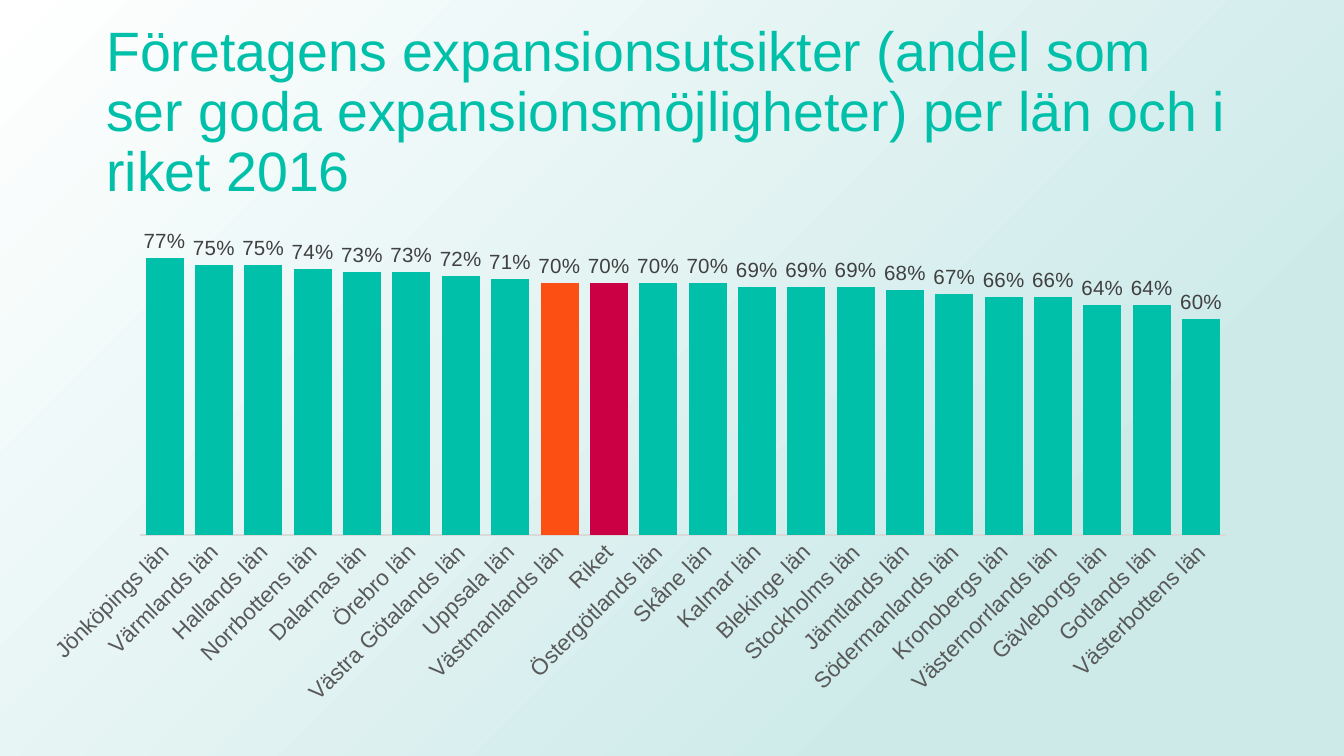
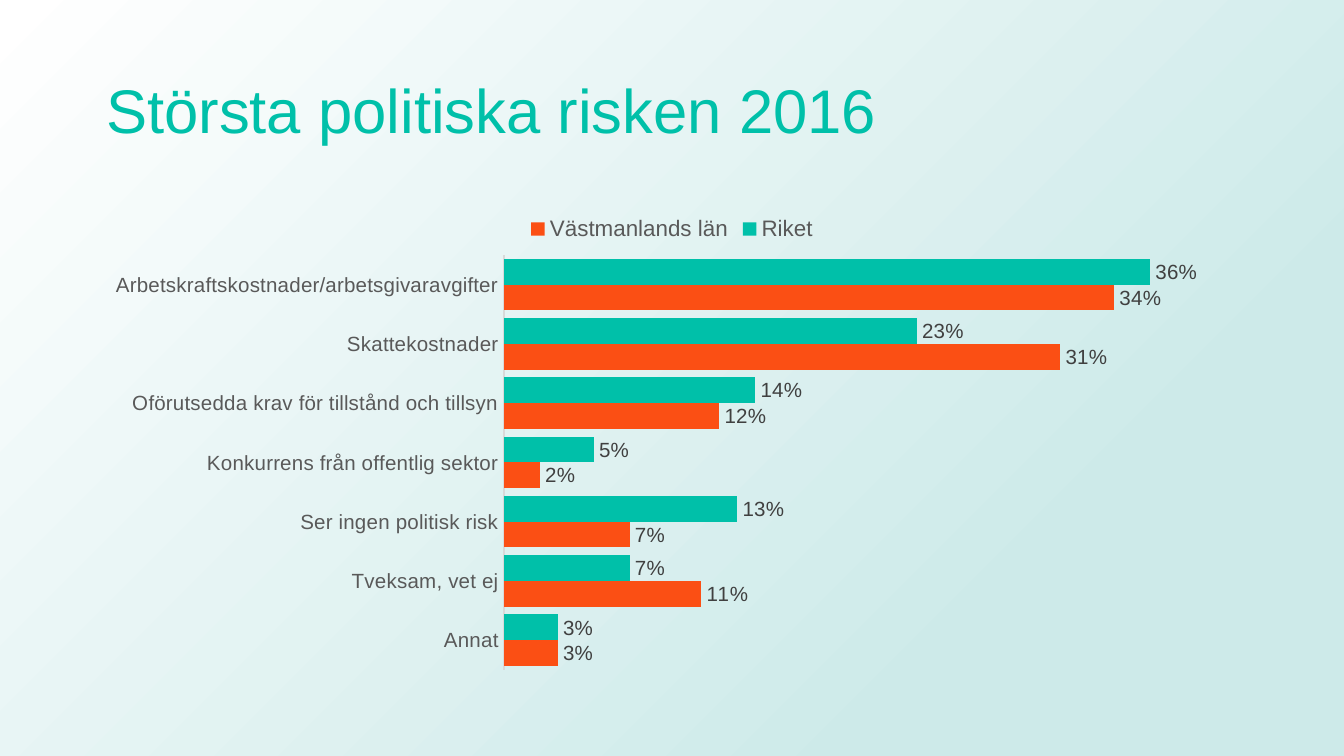
from dataclasses import dataclass

from lxml.etree import SubElement
from pptx import Presentation
from pptx.chart.data import CategoryChartData
from pptx.dml.color import RGBColor
from pptx.enum.chart import XL_CHART_TYPE, XL_LABEL_POSITION, XL_LEGEND_POSITION, XL_TICK_MARK
from pptx.enum.shapes import MSO_SHAPE
from pptx.enum.text import MSO_ANCHOR
from pptx.oxml import parse_xml
from pptx.oxml.ns import nsdecls, qn
from pptx.util import Pt


@dataclass(frozen=True)
class Theme:
    font: str = "Arial"
    teal: str = "00C0A9"
    orange: str = "FB4F14"
    crimson: str = "CB0044"
    axis_text: str = "595959"
    label_text: str = "404040"
    axis_line: str = "D9D9D9"
    mist: str = "CDEAE9"
    white: str = "FFFFFF"
    label_size: float = 11
    legend_size: float = 12


THEME = Theme()
EMU_PER_PX = 914400 / 134.4
SLIDE_SIZE = (1344, 756)
TITLE_BOX = (93, 40, 1158, 147)

COUNTIES = [
    ("Jönköpings län", 0.77), ("Värmlands län", 0.75), ("Hallands län", 0.75),
    ("Norrbottens län", 0.74), ("Dalarnas län", 0.73), ("Örebro län", 0.73),
    ("Västra Götalands län", 0.72), ("Uppsala län", 0.71),
    ("Västmanlands län", 0.70), ("Riket", 0.70), ("Östergötlands län", 0.70),
    ("Skåne län", 0.70), ("Kalmar län", 0.69), ("Blekinge län", 0.69),
    ("Stockholms län", 0.69), ("Jämtlands län", 0.68),
    ("Södermanlands län", 0.67), ("Kronobergs län", 0.66),
    ("Västernorrlands län", 0.66), ("Gävleborgs län", 0.64),
    ("Gotlands län", 0.64), ("Västerbottens län", 0.60),
]
RISKS = [
    ("Arbetskraftskostnader/arbetsgivaravgifter", 0.36, 0.34),
    ("Skattekostnader", 0.23, 0.31),
    ("Oförutsedda krav för tillstånd och tillsyn", 0.14, 0.12),
    ("Konkurrens från offentlig sektor", 0.05, 0.02),
    ("Ser ingen politisk risk", 0.13, 0.07),
    ("Tveksam, vet ej", 0.07, 0.11),
    ("Annat", 0.03, 0.03),
]
SLIDES = [
    dict(
        title="Företagens expansionsutsikter (andel som ser goda "
              "expansionsmöjligheter) per län och i riket 2016",
        title_size=29.7,
        chart=dict(
            kind=XL_CHART_TYPE.COLUMN_CLUSTERED, box=(26, 202, 1226, 513),
            plot=(140, 211, 1086, 324), rows=COUNTIES,
            series=[("Andel", THEME.teal)], top_value=0.9, axis_size=12,
            highlights={"Västmanlands län": THEME.orange, "Riket": THEME.crimson},
            rotation=-45,
        ),
    ),
    dict(
        title="Största politiska risken 2016",
        title_size=33,
        chart=dict(
            kind=XL_CHART_TYPE.BAR_CLUSTERED, box=(93, 202, 1158, 478),
            plot=(504, 255, 718, 415), rows=RISKS,
            series=[("Riket", THEME.teal), ("Västmanlands län", THEME.orange)],
            top_value=0.4, axis_size=11, reverse=True, legend=True,
        ),
    ),
]


def px(*lengths):
    return [round(length * EMU_PER_PX) for length in lengths]


def style_font(font, size, color):
    font.name = THEME.font
    font.size = Pt(size)
    font.bold = False
    font.color.rgb = RGBColor.from_string(color)


def paint(fill, color):
    fill.solid()
    fill.fore_color.rgb = RGBColor.from_string(color)


def add_text(slide, text, box, size, color, anchor=MSO_ANCHOR.MIDDLE, spacing=0.9):
    frame = slide.shapes.add_textbox(*px(*box)).text_frame
    frame.word_wrap = True
    frame.vertical_anchor = anchor
    paragraph = frame.paragraphs[0]
    paragraph.line_spacing = spacing
    run = paragraph.add_run()
    run.text = text
    style_font(run.font, size, color)


def add_backdrop(slide):
    backdrop = slide.shapes.add_shape(MSO_SHAPE.RECTANGLE, *px(0, 0, *SLIDE_SIZE))
    backdrop.shadow.inherit = False
    backdrop.line.fill.background()
    backdrop.fill.gradient()
    linear = backdrop.element.spPr.find(qn("a:gradFill"))
    radial = parse_xml(
        f'<a:gradFill {nsdecls("a")} rotWithShape="1"><a:gsLst>'
        f'<a:gs pos="23000"><a:srgbClr val="{THEME.mist}"/></a:gs>'
        f'<a:gs pos="100000"><a:srgbClr val="{THEME.white}"/></a:gs></a:gsLst>'
        '<a:path path="circle"><a:fillToRect l="100000" t="100000"/></a:path>'
        '</a:gradFill>'
    )
    linear.getparent().replace(linear, radial)


def place_plot(chart, box, plot):
    plot_area = chart.element.find(".//" + qn("c:plotArea"))
    layout = plot_area.find(qn("c:layout"))
    if layout is None:
        layout = parse_xml(f'<c:layout {nsdecls("c")}/>')
        plot_area.insert(0, layout)
    left, top, width, height = box
    settings = {
        "layoutTarget": "inner", "xMode": "edge", "yMode": "edge",
        "x": (plot[0] - left) / width, "y": (plot[1] - top) / height,
        "w": plot[2] / width, "h": plot[3] / height,
    }
    manual = SubElement(layout, qn("c:manualLayout"))
    for tag, value in settings.items():
        SubElement(manual, qn(f"c:{tag}")).set("val", str(value))


def add_bars(slide, kind, box, plot, rows, series, top_value, axis_size,
             highlights=None, rotation=None, reverse=False, legend=False):
    categories, *columns = zip(*rows)
    data = CategoryChartData(number_format="0%")
    data.categories = categories
    for (name, _), values in zip(series, columns):
        data.add_series(name, values)
    chart = slide.shapes.add_chart(kind, *px(*box), data).chart
    chart.has_title = False
    style_font(chart.font, axis_size, THEME.axis_text)

    chart.has_legend = legend
    if legend:
        chart.legend.position = XL_LEGEND_POSITION.TOP
        chart.legend.include_in_layout = False
        style_font(chart.legend.font, THEME.legend_size, THEME.axis_text)

    names_axis, share_axis = chart.category_axis, chart.value_axis
    names_axis.major_tick_mark = XL_TICK_MARK.NONE
    names_axis.reverse_order = reverse
    names_axis.format.line.width = Pt(0.75)
    paint(names_axis.format.line.fill, THEME.axis_line)
    style_font(names_axis.tick_labels.font, axis_size, THEME.axis_text)
    if rotation is not None:
        body = names_axis.format.line and chart.element.find(
            ".//" + qn("c:catAx") + "/" + qn("c:txPr") + "/" + qn("a:bodyPr"))
        body.set("rot", str(rotation * 60000))
    share_axis.minimum_scale = 0
    share_axis.maximum_scale = top_value
    share_axis.has_major_gridlines = False
    share_axis.visible = False

    bars = chart.plots[0]
    bars.gap_width = 30
    bars.vary_by_categories = False
    bars.has_data_labels = True
    labels = bars.data_labels
    labels.show_value = True
    labels.number_format = "0%"
    labels.number_format_is_linked = False
    labels.position = XL_LABEL_POSITION.OUTSIDE_END
    style_font(labels.font, THEME.label_size, THEME.label_text)
    for bar_series, (_, color) in zip(bars.series, series):
        bar_series.invert_if_negative = False
        paint(bar_series.format.fill, color)
        for category, accent in (highlights or {}).items():
            point = bar_series.points[categories.index(category)]
            paint(point.format.fill, accent)
    place_plot(chart, box, plot)


def main():
    deck = Presentation()
    deck.slide_width, deck.slide_height = px(*SLIDE_SIZE)
    for content in SLIDES:
        slide = deck.slides.add_slide(deck.slide_layouts[6])
        add_backdrop(slide)
        add_text(slide, content["title"], TITLE_BOX,
                 size=content["title_size"], color=THEME.teal)
        add_bars(slide, **content["chart"])
    deck.save("out.pptx")


if __name__ == "__main__":
    main()
